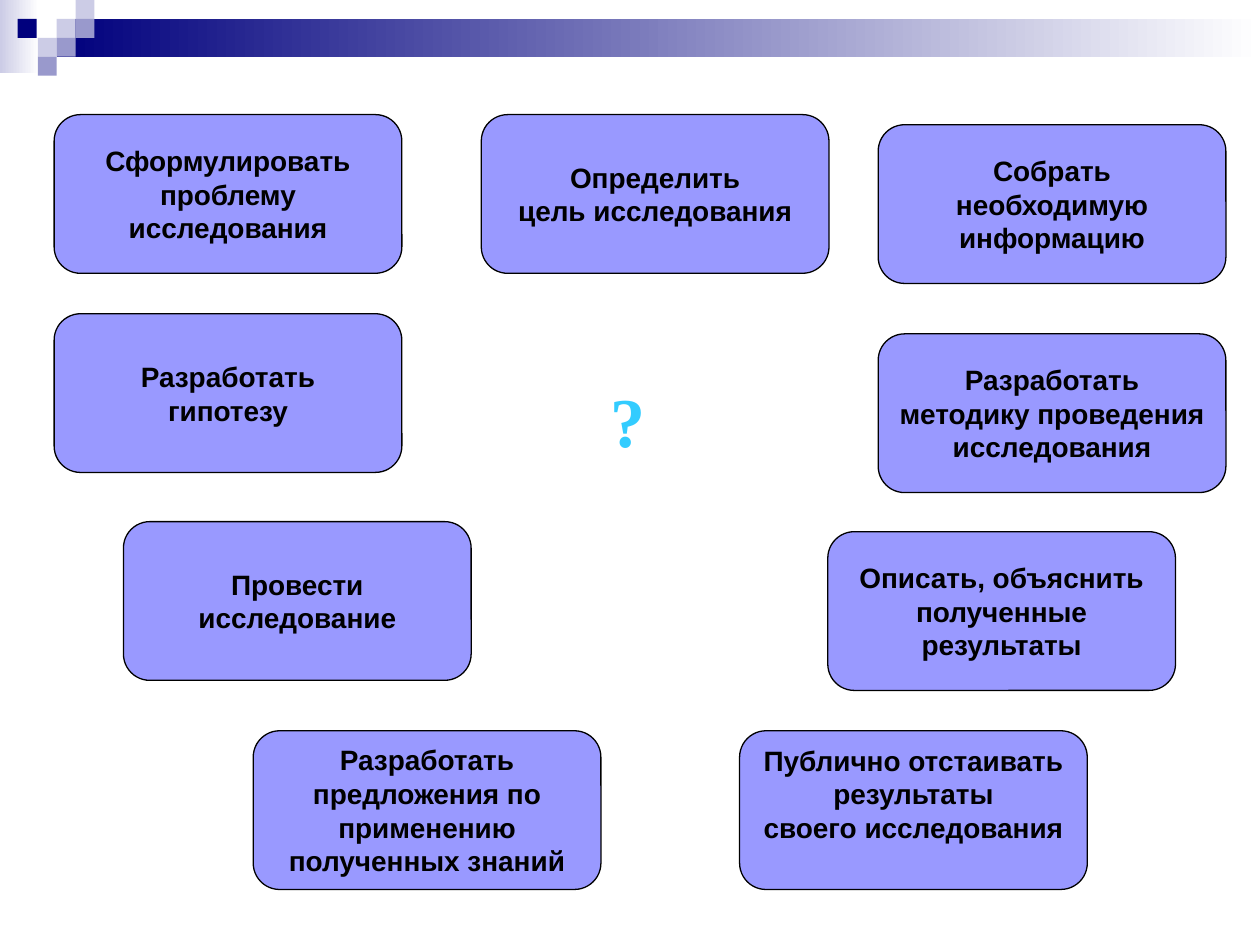
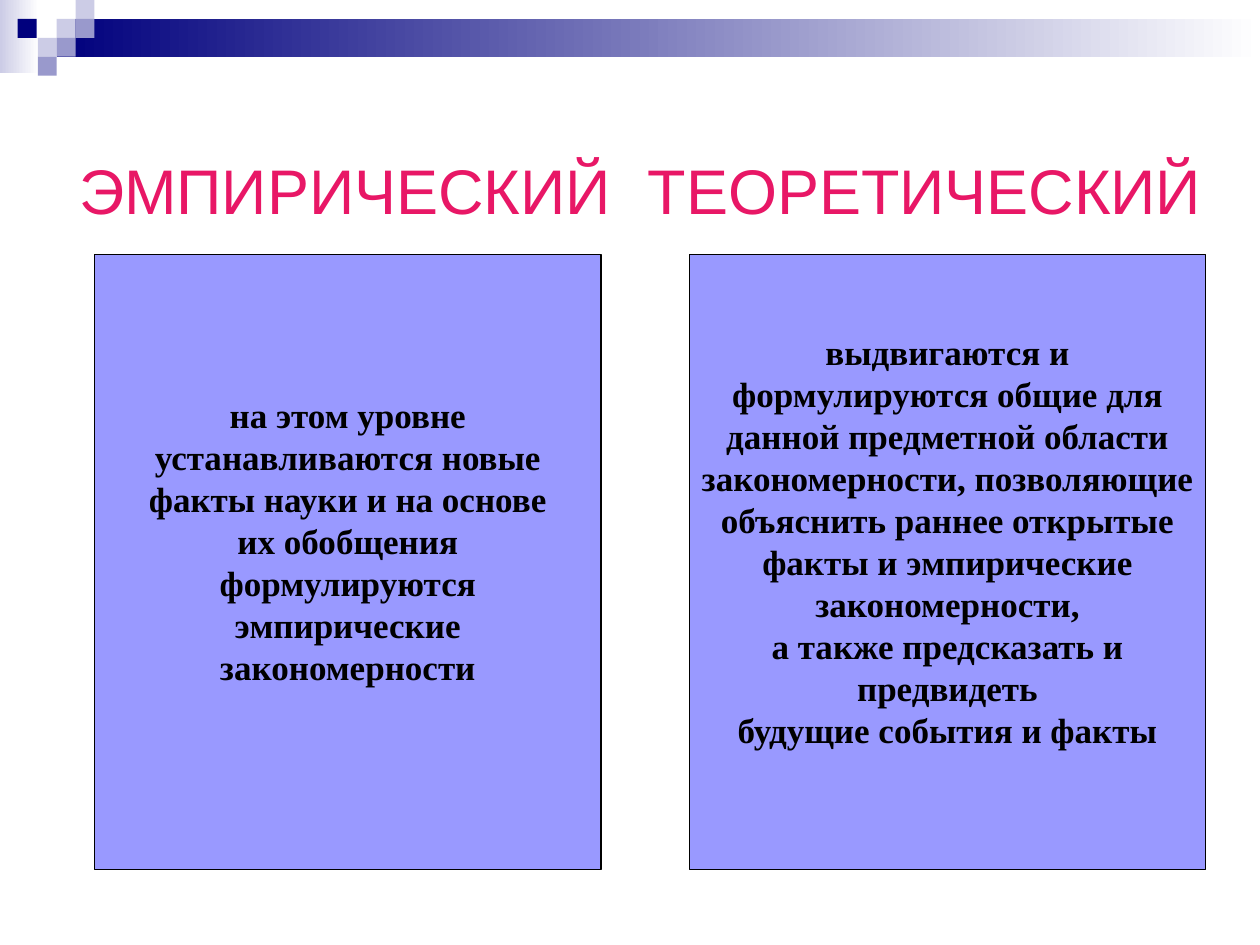
from pptx import Presentation
from pptx.dml.color import RGBColor
from pptx.enum.shapes import MSO_SHAPE as SHAPE
from pptx.enum.text import MSO_ANCHOR as ANCHOR, PP_ALIGN as ALIGN
from pptx.util import Inches, Pt

COLS, ROWS = 100, 75
TILE = 1.5
COLORS = {
    "navy": "00007D", "mist": "CCCCE6", "haze": "9999CC", "white": "FFFFFF",
    "card": "9999FF", "black": "000000", "sky": "33CCFF", "pink": "E81766",
}
# Header mosaic: left, top, colour
TILES = [
    (4.5, 1.5, "mist"), (6, 0, "mist"), (6, 1.5, "haze"), (3, 3, "mist"),
    (1.4, 1.5, "navy"), (4.5, 3, "haze"), (3, 4.5, "haze"),
]

CARD_W, CARD_H = 27.6, 12.6
# Research steps: left, top, text, blank space below the text in points
STEPS = [
    (4.3, 9.1, "Сформулировать\nпроблему\nисследования", 0),
    (38.2, 9.1, "Определить\nцель исследования", 0),
    (69.7, 9.9, "Собрать\nнеобходимую\nинформацию", 0),
    (4.3, 24.9, "Разработать\nгипотезу", 0),
    (9.8, 41.4, "Провести\nисследование", 0),
    (20.1, 58, "Разработать\nпредложения по\nприменению\nполученных знаний", 0),
    (58.7, 58, "Публично отстаивать\nрезультаты\nсвоего исследования", 19),
    (65.7, 42.2, "Описать, объяснить\nполученные\nрезультаты", 0),
    (69.7, 26.5, "Разработать\nметодику проведения\nисследования", 0),
]

TITLE_W = 45
# Levels of knowledge: title, title centre, panel left, panel width, text
LEVELS = [
    ("ЭМПИРИЧЕСКИЙ", 27.4, 7.5, 40.2,
     "на этом уровне\nустанавливаются новые\nфакты науки и на основе\n"
     "их обобщения\nформулируются\nэмпирические\nзакономерности"),
    ("ТЕОРЕТИЧЕСКИЙ", 73.4, 54.7, 41,
     "выдвигаются и\nформулируются общие для\nданной предметной области\n"
     "закономерности, позволяющие\nобъяснить раннее открытые\n"
     "факты и эмпирические\nзакономерности,\nа также предсказать и\n"
     "предвидеть\nбудущие события и факты"),
]


def rgb(name):
    return RGBColor.from_string(COLORS[name])


def write(sp, text, size=16, font="Arial", color="black", bold=True, below=0):
    """Centre text in a shape, leaving `below` points free under it."""
    tf = sp.text_frame
    tf.word_wrap = True
    tf.vertical_anchor = ANCHOR.MIDDLE
    tf.margin_left = tf.margin_right = 0
    tf.margin_top = Inches(0.05)
    tf.margin_bottom = Inches(0.05) + Pt(below)
    p = tf.paragraphs[0]
    p.alignment = ALIGN.CENTER
    p.text = text
    for r in p.runs:
        r.font.name, r.font.size, r.font.bold = font, Pt(size), bold
        r.font.color.rgb = rgb(color)


class Deck:
    """Holds the style, the presentation and the current slide."""

    def __init__(self):
        self.prs = Presentation()
        self.prs.slide_width, self.prs.slide_height = Inches(10), Inches(7.5)

    def box(self, x, y, w, h):
        """Turn columns and rows into lengths."""
        col, row = self.prs.slide_width / COLS, self.prs.slide_height / ROWS
        return [round(n) for n in (x * col, y * row, w * col, h * row)]

    def new_slide(self):
        self.s = self.prs.slides.add_slide(self.prs.slide_layouts[6])
        self.fade(0, 0, 3.1, 5.8, "mist")
        self.fade(4.5, 1.5, 95.5, 3, "navy")
        for x, y, color in TILES:
            self.shape(x, y, TILE, TILE, color)

    def shape(self, x, y, w, h, color, kind=SHAPE.RECTANGLE, line=None):
        sp = self.s.shapes.add_shape(kind, *self.box(x, y, w, h))
        sp.shadow.inherit = False
        sp.fill.solid()
        sp.fill.fore_color.rgb = rgb(color)
        if line:
            sp.line.color.rgb = rgb(line)
            sp.line.width = Pt(0.75)
        else:
            sp.line.fill.background()
        return sp

    def fade(self, x, y, w, h, color):
        """Draw a band that fades to white on the right."""
        fill = self.shape(x, y, w, h, color).fill
        fill.gradient()
        fill.gradient_angle = 0
        for stop, name in zip(fill.gradient_stops, (color, "white")):
            stop.color.rgb = rgb(name)

    def panel(self, x, y, w, h, text, kind=SHAPE.RECTANGLE, **fmt):
        sp = self.shape(x, y, w, h, "card", kind, line="black")
        write(sp, text, **fmt)

    def label(self, x, y, w, h, text, **fmt):
        write(self.s.shapes.add_textbox(*self.box(x, y, w, h)), text, **fmt)


def build_steps(deck):
    deck.new_slide()
    deck.label(39.2, 29.6, 21.3, 7.4, "?", size=40, font="Times New Roman",
               color="sky")
    for x, y, text, below in STEPS:
        deck.panel(x, y, CARD_W, CARD_H, text, SHAPE.ROUNDED_RECTANGLE,
                   below=below)


def build_levels(deck):
    deck.new_slide()
    for title, centre, x, w, text in LEVELS:
        deck.label(centre - TITLE_W / 2, 11.5, TITLE_W, 7.1, title, size=36,
                   color="pink", bold=False)
        deck.panel(x, 20.2, w, 48.8, text, size=20, font="Times New Roman",
                   below=24)


def main():
    deck = Deck()
    build_steps(deck)
    build_levels(deck)
    deck.prs.save("out.pptx")


if __name__ == "__main__":
    main()
